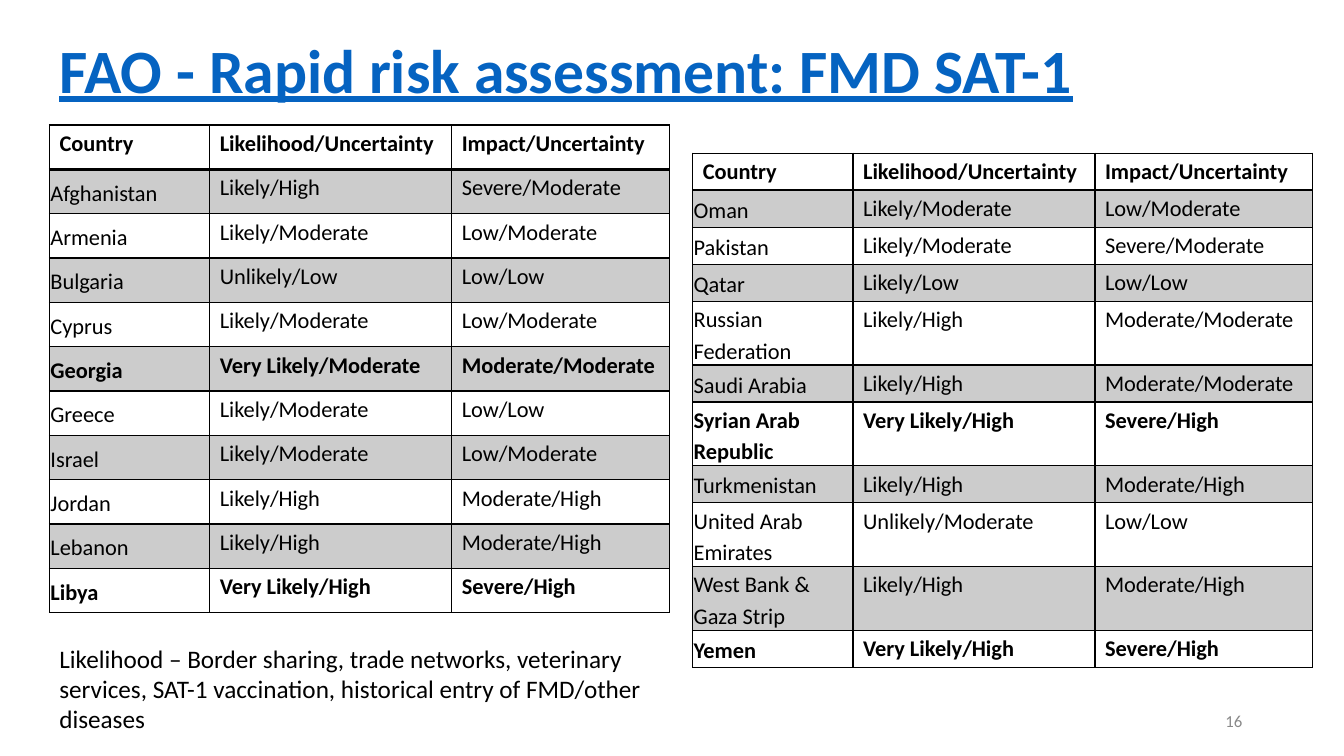
from lxml.etree import SubElement
from pptx import Presentation
from pptx.dml.color import RGBColor
from pptx.enum.text import MSO_ANCHOR as ANCHOR, PP_ALIGN as ALIGN
from pptx.oxml.ns import qn
from pptx.util import Inches, Pt

BLACK = RGBColor(0x00, 0x00, 0x00)
BLUE = RGBColor(0x05, 0x63, 0xC1)
GRAY = RGBColor(0x89, 0x89, 0x89)

HEADER = ("Country", "Likelihood/Uncertainty", "Impact/Uncertainty")
COLUMNS = (1.59, 2.4, 2.16)
BOLD_COUNTRIES = {"Georgia", "Libya", "Syrian Arab Republic", "Yemen"}
LEFT_RISKS = [
    ("Afghanistan", "Likely/High", "Severe/Moderate"),
    ("Armenia", "Likely/Moderate", "Low/Moderate"),
    ("Bulgaria", "Unlikely/Low", "Low/Low"),
    ("Cyprus", "Likely/Moderate", "Low/Moderate"),
    ("Georgia", "Very Likely/Moderate", "Moderate/Moderate"),
    ("Greece", "Likely/Moderate", "Low/Low"),
    ("Israel", "Likely/Moderate", "Low/Moderate"),
    ("Jordan", "Likely/High", "Moderate/High"),
    ("Lebanon", "Likely/High", "Moderate/High"),
    ("Libya", "Very Likely/High", "Severe/High"),
]
RIGHT_RISKS = [
    ("Oman", "Likely/Moderate", "Low/Moderate"),
    ("Pakistan", "Likely/Moderate", "Severe/Moderate"),
    ("Qatar", "Likely/Low", "Low/Low"),
    ("Russian Federation", "Likely/High", "Moderate/Moderate"),
    ("Saudi Arabia", "Likely/High", "Moderate/Moderate"),
    ("Syrian Arab Republic", "Very Likely/High", "Severe/High"),
    ("Turkmenistan", "Likely/High", "Moderate/High"),
    ("United Arab Emirates", "Unlikely/Moderate", "Low/Low"),
    ("West Bank & Gaza Strip", "Likely/High", "Moderate/High"),
    ("Yemen", "Very Likely/High", "Severe/High"),
]


class RiskSlide:
    """Holds the text style and the slide, and adds text and risk tables."""

    font = "Calibri"

    def __init__(self, s):
        self.s = s

    def add_run(self, tf, text, size, color=BLACK, para=None, **style):
        p = tf.paragraphs[0]
        for name, value in (para or {}).items():
            setattr(p, name, value)
        r = p.add_run()
        r.text = text
        for name, value in {"name": self.font, "size": Pt(size), **style}.items():
            setattr(r.font, name, value)
        r.font.color.rgb = color

    def text(self, box, text, size, color=BLACK, anchor=ANCHOR.TOP, **style):
        tf = self.s.shapes.add_textbox(*map(Inches, box)).text_frame
        tf.word_wrap = True
        tf.vertical_anchor = anchor
        self.add_run(tf, text, size, color, **style)

    def borders(self, cell, widths):
        tc_pr = cell._tc.get_or_add_tcPr()
        for side, width in widths.items():
            ln = SubElement(tc_pr, qn(f"a:ln{side}"), w=str(Pt(width)))
            fill = SubElement(ln, qn("a:solidFill"))
            SubElement(fill, qn("a:srgbClr"), val=str(BLACK))

    def shade(self, cell, percent):
        cell.fill.solid()
        cell.fill.fore_color.rgb = BLACK
        color = cell._tc.tcPr.find(qn("a:solidFill")).find(qn("a:srgbClr"))
        SubElement(color, qn("a:alpha"), val=str(percent * 1000))

    def table(self, left, top, row_height, risks):
        rows = [HEADER, *risks]
        box = (left, top, sum(COLUMNS), row_height * len(rows))
        tbl = self.s.shapes.add_table(len(rows), len(COLUMNS), *map(Inches, box)).table
        tbl.first_row = tbl.horz_banding = False
        for col, width in zip(tbl.columns, COLUMNS):
            col.width = Inches(width)
        for i, row in enumerate(rows):
            tbl.rows[i].height = Inches(row_height)
            for j, text in enumerate(row):
                self.cell(tbl.cell(i, j), text, i, j, i == 0 or row[0] in BOLD_COUNTRIES)

    def cell(self, cell, text, i, j, bold):
        self.borders(cell, {"L": 1, "R": 1, "T": 2 if i == 1 else 1, "B": 2 if i == 0 else 1})
        if i % 2:
            self.shade(cell, 20)
        else:
            cell.fill.background()
        para = {}
        if i and j == 0:
            cell.vertical_anchor = ANCHOR.MIDDLE
            for side in ("left", "top", "right", "bottom"):
                setattr(cell, f"margin_{side}", Inches(0.01))
            para = {"line_spacing": 1.15, "space_after": Pt(8)}
        self.add_run(cell.text_frame, text, 16, para=para, bold=bold)


def main():
    prs = Presentation()
    prs.slide_width, prs.slide_height = Inches(13.33), Inches(7.5)
    slide = RiskSlide(prs.slides.add_slide(prs.slide_layouts[6]))
    slide.text((0.49, 0, 12.35, 1.45), "FAO - Rapid risk assessment: FMD SAT-1", 44, BLUE,
               ANCHOR.MIDDLE, para={"line_spacing": 0.9}, bold=True, underline=True)
    slide.table(0.49, 1.24, 0.44, LEFT_RISKS)
    slide.text((9.42, 6.95, 3, 0.4), "16", 12, GRAY, ANCHOR.MIDDLE,
               para={"alignment": ALIGN.RIGHT})
    slide.table(6.87, 1.52, 0.35, RIGHT_RISKS)
    slide.text((0.49, 6.33, 5.97, 1.01),
               "Likelihood – Border sharing, trade networks, veterinary services, "
               "SAT-1 vaccination, historical entry of FMD/other diseases", 18)
    prs.save("out.pptx")


if __name__ == "__main__":
    main()
